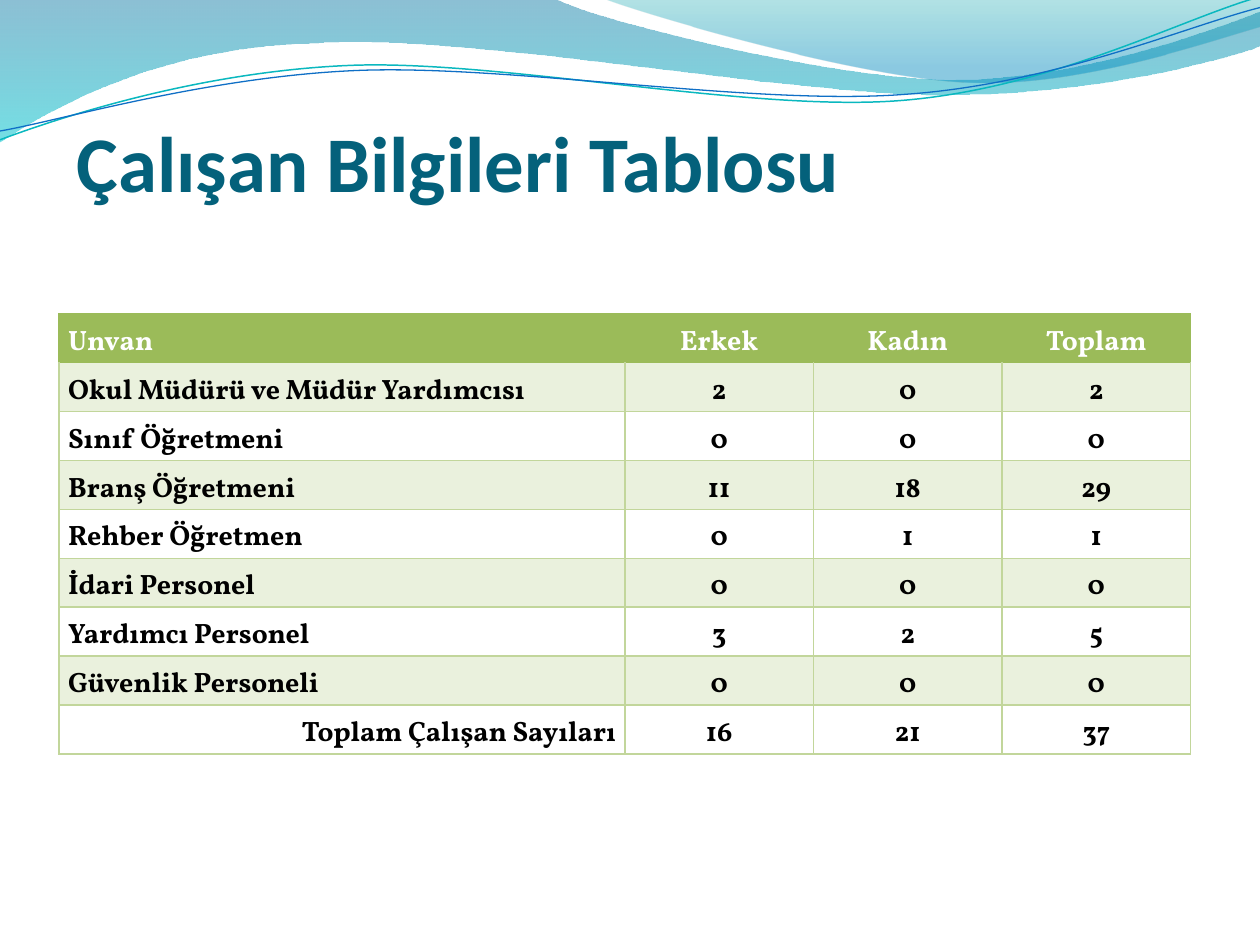
from dataclasses import dataclass

from pptx import Presentation
from pptx.dml.color import RGBColor
from pptx.enum.text import MSO_ANCHOR, PP_ALIGN
from pptx.oxml.ns import qn
from pptx.util import Inches, Pt
from lxml.etree import SubElement

COLORS = {
    "title": "04617B", "header": "9BBB59", "band": "EAF1DD", "grid": "C2D69B",
    "white": "FFFFFF", "black": "000000",
    "blue": "0074A1", "cyan": "00C6CF", "teal": "00A1A9", "sky": "008BBF",
    "teal_line": "0AB8BF", "blue_line": "0F6FC6",
}
UNITS = 1000  # path units per inch


@dataclass
class Stop:
    position: float
    color: str
    opacity: int


@dataclass
class Wave:
    """Path in inches: 2 numbers are a line end, 6 a Bezier curve."""
    start: tuple[float, float]
    segments: list[tuple[float, ...]]
    stops: tuple[Stop, ...] = ()
    line: str = ""
    width: float = 0


WAVES = [
    Wave((0, 0), [(4.4, -0.01), (4.76, 0.17, 6.64, 0.63, 7.58, 0.63),
                  (8.53, 0.63, 9.58, 0.26, 10, 0.09), (10.01, 0.36),
                  (9.83, 0.44, 8.7, 0.76, 7.46, 0.75),
                  (6.22, 0.75, 3.82, 0.28, 2.57, 0.34),
                  (1.29, 0.36, 0.46, 0.83, -0.01, 1.13), (0, 0)],
         stops=(Stop(0, "blue", 45), Stop(1, "cyan", 55))),
    Wave((4.79, -0.01), [(5.09, 0.11, 6.82, 0.62, 7.69, 0.65),
                         (8.56, 0.69, 9.61, 0.32, 10, 0.21), (10, 0), (4.79, -0.01)],
         stops=(Stop(0, "teal", 30), Stop(0.8, "sky", 45))),
    Wave((0, 1.11), [(0.48, 0.93, 1.58, 0.57, 2.77, 0.52),
                     (3.95, 0.47, 5.93, 0.89, 7.13, 0.8),
                     (8.33, 0.71, 9.38, 0.15, 9.98, -0.02)],
         line="teal_line", width=0.85),
    Wave((0, 1.04), [(0.47, 0.96, 1.64, 0.61, 2.83, 0.56),
                     (4.03, 0.51, 5.97, 0.84, 7.17, 0.75),
                     (8.36, 0.67, 9.41, 0.21, 10, 0.06)],
         line="blue_line", width=0.75),
]

ROWS = [
    ("Unvan", "Erkek", "Kadın", "Toplam"),
    ("Okul Müdürü ve Müdür Yardımcısı", 2, 0, 2),
    ("Sınıf Öğretmeni", 0, 0, 0),
    ("Branş Öğretmeni", 11, 18, 29),
    ("Rehber Öğretmen", 0, 1, 1),
    ("İdari Personel", 0, 0, 0),
    ("Yardımcı Personel", 3, 2, 5),
    ("Güvenlik Personeli", 0, 0, 0),
    ("Toplam Çalışan Sayıları", 16, 21, 37),
]
TABLE_WIDTH = 8.98
COL_WIDTHS = [TABLE_WIDTH / 2] + [TABLE_WIDTH / 6] * 3
ROW_HEIGHTS = [0.3] + [0.37] * (len(ROWS) - 1)


def rgb(name: str) -> RGBColor:
    return RGBColor.from_string(COLORS[name])


def set_all(obj, values: dict) -> None:
    for name, value in values.items():
        setattr(obj, name, value)


def curve_segments(sp, wave: Wave) -> None:
    """Turn the straight steps of a wave into Bezier curves."""
    left, top = sp.left / Inches(1), sp.top / Inches(1)
    for step, seg in zip(list(sp.element.iter(qn("a:lnTo"))), wave.segments):
        if len(seg) == 2:
            continue
        step.tag = qn("a:cubicBezTo")
        for pt in list(step):
            step.remove(pt)
        for x, y in zip(seg[::2], seg[1::2]):
            SubElement(step, qn("a:pt"), x=str(round((x - left) * UNITS)),
                       y=str(round((y - top) * UNITS)))


def draw_wave(s, wave: Wave) -> None:
    ends = [(round(x * UNITS), round(y * UNITS))
            for x, y in [wave.start] + [seg[-2:] for seg in wave.segments]]
    builder = s.shapes.build_freeform(*ends[0], scale=Inches(1) / UNITS)
    builder.add_line_segments(ends[1:], close=bool(wave.stops))
    sp = builder.convert_to_shape()
    curve_segments(sp, wave)
    sp.shadow.inherit = False
    if not wave.stops:
        sp.fill.background()
        sp.line.color.rgb = rgb(wave.line)
        sp.line.width = Pt(wave.width)
        return
    sp.line.fill.background()
    sp.fill.gradient()
    sp.fill.gradient_angle = 270
    for grad_stop, stop in zip(sp.fill.gradient_stops, wave.stops):
        grad_stop.position = stop.position
        grad_stop.color.rgb = rgb(stop.color)
    for clr, stop in zip(sp.element.spPr.iter(qn("a:srgbClr")), wave.stops):
        SubElement(clr, qn("a:alpha"), val=str(stop.opacity * 1000))


def set_borders(cell, sides: dict[str, str]) -> None:
    tc_pr = cell._tc.get_or_add_tcPr()
    for side in "LRTB":
        ln = SubElement(tc_pr, qn(f"a:ln{side}"), w=str(Pt(1)))
        SubElement(SubElement(ln, qn("a:solidFill")), qn("a:srgbClr"),
                   val=COLORS[sides[side]])


def draw_cell(cell, value, row: int, col: int) -> None:
    header, total = row == 0, row == len(ROWS) - 1
    edge = "header" if header else "grid"
    set_borders(cell, dict.fromkeys("LRB", edge) | {"T": "header" if row < 2 else "grid"})
    cell.fill.solid()
    cell.fill.fore_color.rgb = rgb("header" if header else "band" if row % 2 else "white")
    set_all(cell, {"margin_left": Inches(0.07), "margin_right": Inches(0.07),
                   "margin_top": 0, "margin_bottom": 0,
                   "vertical_anchor": MSO_ANCHOR.MIDDLE})
    p = cell.text_frame.paragraphs[0]
    p.line_spacing = 1.25
    p.alignment = PP_ALIGN.CENTER if col else PP_ALIGN.RIGHT if total else PP_ALIGN.LEFT
    r = p.add_run()
    r.text = str(value)
    set_all(r.font, {"name": "Vollkorn", "size": Pt(16), "bold": True})
    r.font.color.rgb = rgb("white" if header else "black")


def draw_table(s) -> None:
    table = s.shapes.add_table(len(ROWS), len(COL_WIDTHS), Inches(0.47), Inches(2.49),
                               Inches(TABLE_WIDTH), Inches(sum(ROW_HEIGHTS))).table
    set_all(table, {"first_row": False, "horz_banding": False})
    for column, width in zip(table.columns, COL_WIDTHS):
        column.width = Inches(width)
    for row, height in zip(table.rows, ROW_HEIGHTS):
        row.height = Inches(height)
    for i, values in enumerate(ROWS):
        for j, value in enumerate(values):
            draw_cell(table.cell(i, j), value, i, j)


def draw_title(s) -> None:
    title = s.shapes.title
    set_all(title, {"left": Inches(0.47), "top": Inches(1.09),
                    "width": Inches(9), "height": Inches(0.56)})
    tf = title.text_frame
    set_all(tf, {"margin_left": Inches(0.14), "margin_right": 0, "margin_top": 0,
                 "margin_bottom": 0, "vertical_anchor": MSO_ANCHOR.BOTTOM})
    p = tf.paragraphs[0]
    p.alignment = PP_ALIGN.LEFT
    r = p.add_run()
    r.text = "Çalışan Bilgileri Tablosu"
    set_all(r.font, {"name": "Calibri", "size": Pt(45), "bold": True})
    r.font.color.rgb = rgb("title")


def main() -> None:
    prs = Presentation()
    prs.slide_width, prs.slide_height = Inches(10), Inches(7.5)
    s = prs.slides.add_slide(prs.slide_layouts[5])
    # Wave decoration along the top
    for wave in WAVES:
        draw_wave(s, wave)
    # Title and staff table
    draw_title(s)
    draw_table(s)
    prs.save("out.pptx")


if __name__ == "__main__":
    main()
